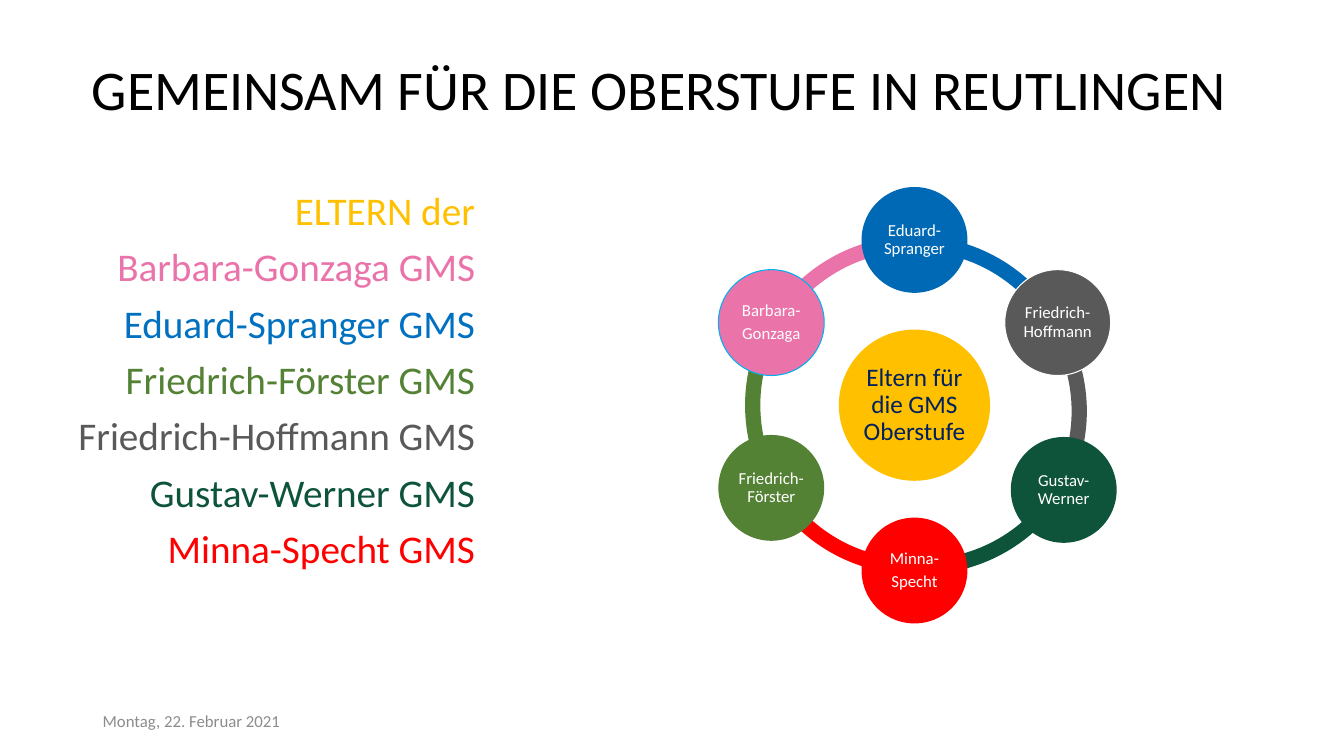
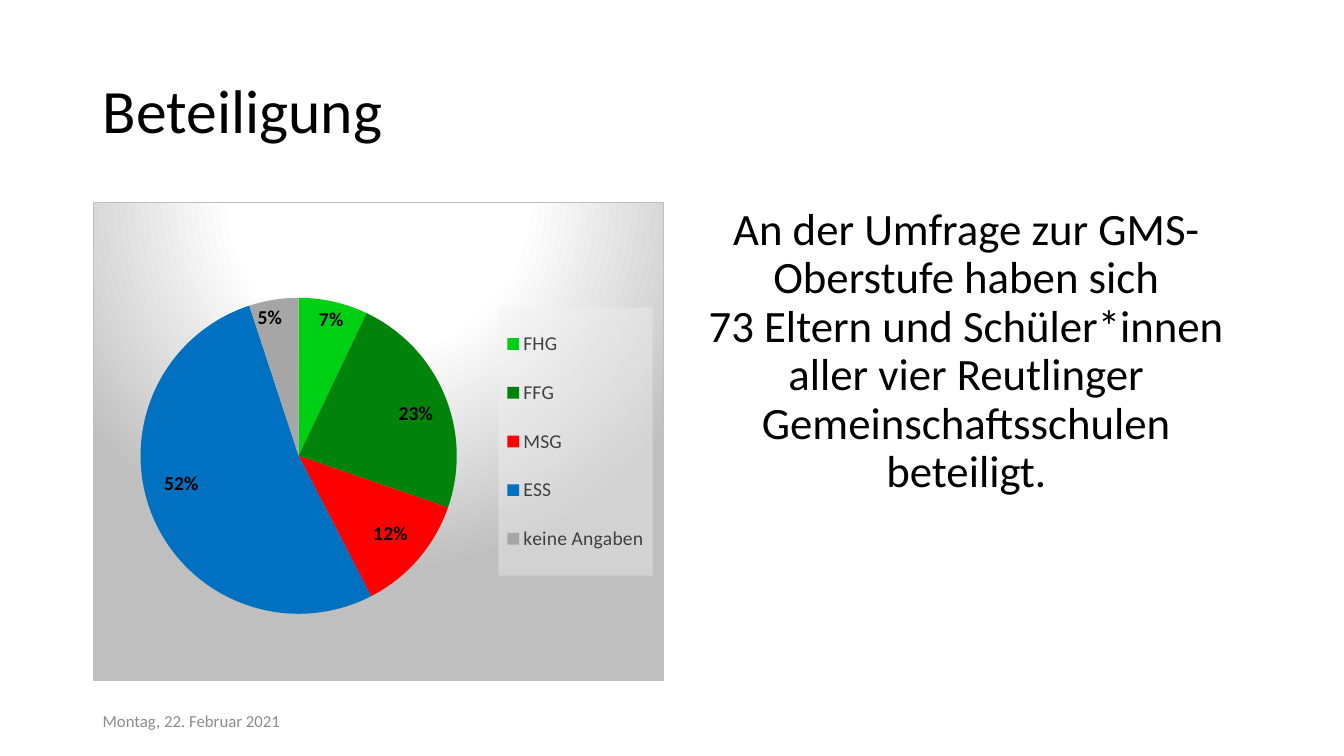
from math import cos, radians, sin

from lxml import etree
from pptx import Presentation
from pptx.chart.data import CategoryChartData
from pptx.dml.color import RGBColor
from pptx.enum.chart import XL_CHART_TYPE as ChartType, XL_LABEL_POSITION as LabelPosition
from pptx.enum.chart import XL_LEGEND_POSITION as LegendPosition
from pptx.enum.shapes import MSO_SHAPE as Shape
from pptx.enum.text import MSO_ANCHOR as Anchor, MSO_AUTO_SIZE as AutoSize, PP_ALIGN as Align
from pptx.oxml import parse_xml
from pptx.oxml.ns import nsdecls, qn
from pptx.util import Pt

PX = 9144
FONT = "Calibri"
COLORS = {
    "black": "000000", "white": "FFFFFF", "navy": "002060", "date": "8C8C8C",
    "gold": "FFC000", "pink": "EA73A9", "sky": "00B0F0", "blue": "0070C0",
    "deep blue": "0069B5", "leaf": "548235", "slate": "595959", "forest": "0E543A",
    "red": "FF0000", "lime": "00D013", "green": "00830A", "grey": "A6A6A6",
    "legend text": "404040", "legend fill": "F2F2F2", "chart edge": "BFBFBF",
}

DATE = "Montag, 22. Februar 2021"
DATE_BOX = (92, 695, 300, 40)

NETWORK_TITLE = "GEMEINSAM FÜR DIE OBERSTUFE IN REUTLINGEN"
PARENTS = [
    ("ELTERN der", "gold"),
    ("Barbara-Gonzaga GMS", "pink"),
    ("Eduard-Spranger GMS", "blue"),
    ("Friedrich-Förster GMS", "leaf"),
    ("Friedrich-Hoffmann GMS", "slate"),
    ("Gustav-Werner GMS", "forest"),
    ("Minna-Specht GMS", "red"),
]
HUB = ("Eltern für die GMS Oberstufe", "gold")
HUB_CENTER = (907, 402)
HUB_SIZE, SCHOOL_SIZE, RING_SIZE, ORBIT = 150, 105, 336, 164
RING_THICKNESS = 0.045
DEGREE = 0.6
SCHOOLS = [
    {"lines": ["Eduard-Spranger"], "color": "deep blue"},
    {"lines": ["Friedrich-Hoffmann"], "color": "slate", "line": "white",
     "arc_shift": (3, 6), "arc": (327.46, 28.2)},
    {"lines": ["Gustav-Werner"], "color": "forest", "shift": (6, 2),
     "arc_shift": (7, 0), "arc": (30.62, 92.51)},
    {"lines": ["Minna-", "Specht"], "color": "red"},
    {"lines": ["Friedrich-Förster"], "color": "leaf"},
    {"lines": ["Barbara-", "Gonzaga"], "color": "pink", "line": "sky"},
]

SURVEY_TITLE = "Beteiligung"
SURVEY_TEXT = [
    "An der Umfrage zur GMS- Oberstufe haben sich",
    "73 Eltern und Schüler*innen aller vier Reutlinger Gemeinschaftsschulen beteiligt.",
]
SHARES = [
    ("FHG", 7, "lime", (0.02, 0)),
    ("FFG", 23, "green", (-0.01, 0.01)),
    ("MSG", 12, "red", (-0.01, -0.02)),
    ("ESS", 52, "blue", (0.01, -0.04)),
    ("keine Angaben", 5, "grey", (-0.03, 0)),
]
PERCENT = '0"%"'
CHART_BOX = (92, 200, 567, 476)
PIE_LAYOUT = {"x": 0.08, "y": 0.2, "w": 0.56, "h": 0.66}
LEGEND_LAYOUT = {"x": 0.71, "y": 0.22, "w": 0.27, "h": 0.56}


def rgb(name):
    return RGBColor.from_string(COLORS[name])


def emu(box):
    return [round(value * PX) for value in box]


def place(shape, box):
    for name, value in zip(("left", "top", "width", "height"), emu(box)):
        setattr(shape, name, value)


def style_font(font, size, color, bold=False):
    for name, value in {"name": FONT, "size": Pt(size), "bold": bold}.items():
        setattr(font, name, value)
    font.color.rgb = rgb(color)


def write(shape, paragraphs, size, anchor=Anchor.TOP, inset=None, **layout):
    frame = shape.text_frame
    settings = {"word_wrap": True, "auto_size": AutoSize.NONE, "vertical_anchor": anchor}
    if inset is not None:
        for side in ("left", "top", "right", "bottom"):
            settings[f"margin_{side}"] = inset * PX
    for name, value in settings.items():
        setattr(frame, name, value)
    for index, (lines, color) in enumerate(paragraphs):
        para = frame.add_paragraph() if index else frame.paragraphs[0]
        for name, value in layout.items():
            setattr(para, name, value)
        for number, line in enumerate(lines):
            if number:
                para.add_line_break()
            span = para.add_run()
            span.text = line
            style_font(span.font, size, color)


def start_page(deck, title, title_box, title_size):
    page = deck.slides.add_slide(deck.slide_layouts[1])
    place(page.shapes.title, title_box)
    write(page.shapes.title, [([title], "black")], title_size, Anchor.MIDDLE,
          alignment=Align.LEFT, line_spacing=0.9)
    date = page.shapes.add_textbox(*emu(DATE_BOX))
    write(date, [([DATE], "date")], 12, Anchor.MIDDLE)
    return page


def fill_body(page, box, paragraphs, size, align):
    body = page.placeholders[1]
    place(body, box)
    write(body, paragraphs, size, alignment=align, line_spacing=0.9, space_before=Pt(10))
    for para in body.text_frame.paragraphs:
        props = para._p.get_or_add_pPr()
        props.set("marL", "0")
        props.set("indent", "0")
        etree.SubElement(props, qn("a:buNone"))


def add_round(page, kind, center, size, color, line=None):
    x, y = center
    shape = page.shapes.add_shape(kind, *emu((x - size / 2, y - size / 2, size, size)))
    shape.shadow.inherit = False
    shape.fill.solid()
    shape.fill.fore_color.rgb = rgb(color)
    if line:
        shape.line.color.rgb = rgb(line)
        shape.line.width = Pt(0.75)
    else:
        shape.line.fill.background()
    return shape


def label_round(shape, lines, size, color, inset):
    write(shape, [([line], color) for line in lines], size, Anchor.MIDDLE, inset,
          alignment=Align.CENTER, line_spacing=0.9, space_after=Pt(round(size * 0.35)))


def moved(point, shift):
    return point[0] + shift[0], point[1] + shift[1]


def build_network(deck):
    page = start_page(deck, NETWORK_TITLE, (81, 25, 1253, 134), 40)
    fill_body(page, (25, 185, 456, 461),
              [([text], color) for text, color in PARENTS], 28, Align.RIGHT)
    step = 360 / len(SCHOOLS)
    angles = [(270 + index * step) % 360 for index in range(len(SCHOOLS))]
    for school, angle in reversed(list(zip(SCHOOLS, angles))):
        center = moved(HUB_CENTER, school.get("arc_shift", (0, 0)))
        arc = add_round(page, Shape.BLOCK_ARC, center, RING_SIZE, school["color"])
        start, end = school.get("arc", (angle, (angle + step) % 360))
        for index, value in enumerate((start * DEGREE, end * DEGREE, RING_THICKNESS)):
            arc.adjustments[index] = value
    text, color = HUB
    hub = add_round(page, Shape.OVAL, HUB_CENTER, HUB_SIZE, color)
    label_round(hub, [text], 18, "navy", 0)
    for school, angle in zip(SCHOOLS, angles):
        turn = radians(angle)
        center = moved(HUB_CENTER, (ORBIT * cos(turn), ORBIT * sin(turn)))
        center = moved(center, school.get("shift", (0, 0)))
        circle = add_round(page, Shape.OVAL, center, SCHOOL_SIZE,
                           school["color"], school.get("line"))
        label_round(circle, school["lines"], 12, "white", 2)


def manual_layout(parts, lead=""):
    values = "".join(f'<c:{name} val="{value}"/>' for name, value in parts.items())
    return parse_xml(f'<c:layout {nsdecls("c")}><c:manualLayout>{lead}{values}'
                     '</c:manualLayout></c:layout>')


def drop_layout(element):
    for layout in element.findall(qn("c:layout")):
        element.remove(layout)


def decorate_chart(chart):
    stops = "".join(
        f'<a:gs pos="{pos * 1000}"><a:srgbClr val="{COLORS[name]}"/></a:gs>'
        for pos, name in ((0, "white"), (39, "white"), (100, "chart edge")))
    space = chart.element
    space.find(qn("c:chart")).addnext(parse_xml(
        f'<c:spPr {nsdecls("c", "a")}><a:gradFill><a:gsLst>{stops}</a:gsLst>'
        '<a:path path="circle"><a:fillToRect l="50000" t="-80000" r="50000" b="180000"/>'
        '</a:path></a:gradFill><a:ln w="9525"><a:solidFill>'
        f'<a:srgbClr val="{COLORS["chart edge"]}"/></a:solidFill></a:ln></c:spPr>'))
    edges = '<c:xMode val="edge"/><c:yMode val="edge"/>'
    plot_area = next(space.iter(qn("c:plotArea")))
    drop_layout(plot_area)
    plot_area.insert(0, manual_layout(PIE_LAYOUT, f'<c:layoutTarget val="inner"/>{edges}'))
    legend = next(space.iter(qn("c:legend")))
    drop_layout(legend)
    legend.find(qn("c:legendPos")).addnext(manual_layout(LEGEND_LAYOUT, edges))
    legend.find(qn("c:overlay")).addnext(parse_xml(
        f'<c:spPr {nsdecls("c", "a")}><a:solidFill><a:srgbClr val="{COLORS["legend fill"]}">'
        '<a:alpha val="39000"/></a:srgbClr></a:solidFill></c:spPr>'))
    for label, share in zip(space.iter(qn("c:dLbl")), SHARES):
        index = label.find(qn("c:idx"))
        number = etree.Element(qn("c:numFmt"), formatCode=PERCENT, sourceLinked="0")
        index.addnext(number)
        index.addnext(manual_layout(dict(zip("xy", share[3]))))


def build_survey(deck):
    page = start_page(deck, SURVEY_TITLE, (92, 40, 1150, 145), 44)
    fill_body(page, (675, 200, 567, 476), [(SURVEY_TEXT, "black")], 32, Align.CENTER)
    data = CategoryChartData()
    data.categories = [share[0] for share in SHARES]
    data.add_series("Series 1", [share[1] for share in SHARES])
    chart = page.shapes.add_chart(ChartType.PIE, *emu(CHART_BOX), data).chart
    chart.has_title = False
    style_font(chart.font, 10, "black")
    plot = chart.plots[0]
    plot.vary_by_categories = True
    series = plot.series[0]
    labels = series.data_labels
    for name, value in {"show_value": True, "show_percentage": False,
                        "number_format": PERCENT, "number_format_is_linked": False,
                        "position": LabelPosition.INSIDE_END}.items():
        setattr(labels, name, value)
    style_font(labels.font, 14, "black", bold=True)
    for index, share in enumerate(SHARES):
        point = series.points[index]
        point.format.fill.solid()
        point.format.fill.fore_color.rgb = rgb(share[2])
        style_font(point.data_label.font, 14, "black", bold=True)
        point.data_label.position = LabelPosition.INSIDE_END
    chart.has_legend = True
    chart.legend.position = LegendPosition.RIGHT
    chart.legend.include_in_layout = False
    style_font(chart.legend.font, 14, "legend text")
    decorate_chart(chart)


def main():
    deck = Presentation()
    deck.slide_width, deck.slide_height = emu((1333, 750))
    build_network(deck)
    build_survey(deck)
    deck.save("out.pptx")


if __name__ == "__main__":
    main()
